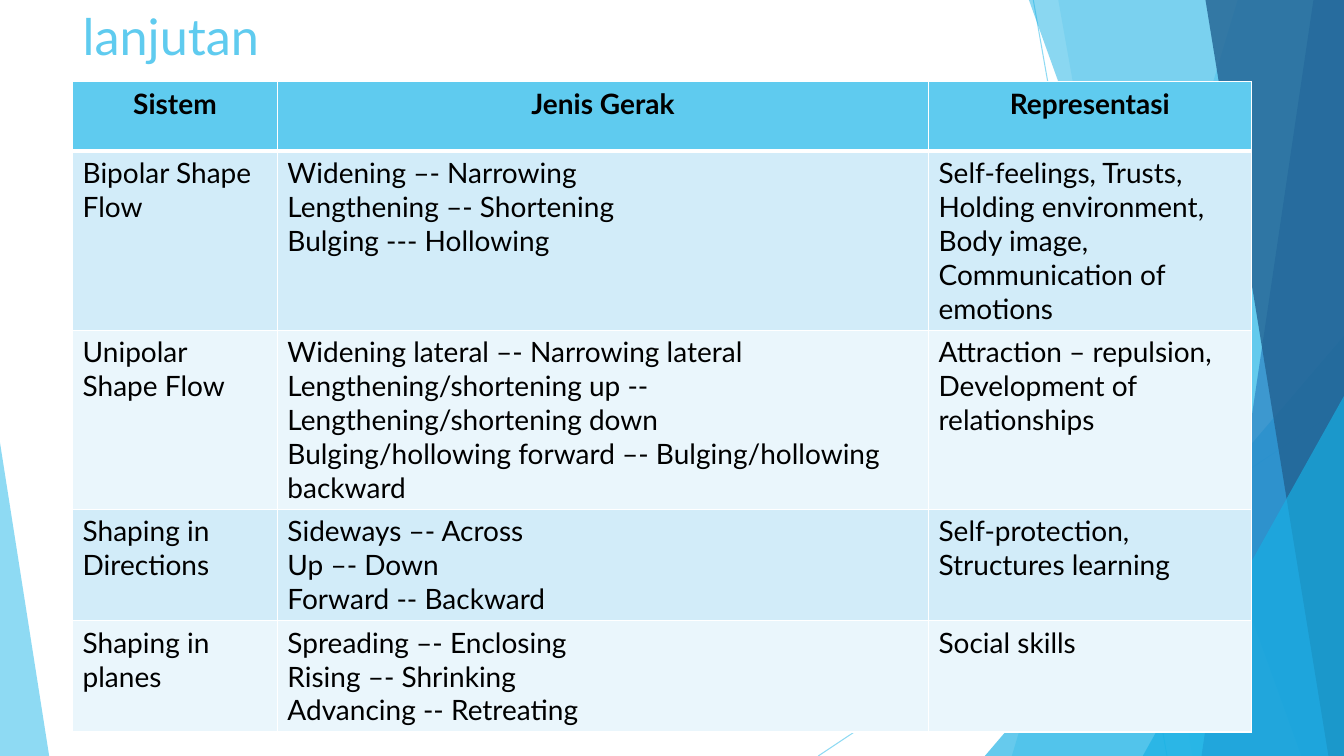
from lxml import etree
from pptx import Presentation
from pptx import util as u
from pptx.dml.color import RGBColor
from pptx.enum import shapes, text
from pptx.oxml.ns import qn

WIDTH, HEIGHT = 33.87, 19.05  # all lengths in cm
FONT = "Lato"
SKY, CYAN, BLUE, NAVY = "5FCBEF", "17B0E4", "2E83C3", "226292"
BANDS = ["D2ECF9", "EAF6FC"]
WHITE, BLACK = "FFFFFF", "000000"

TITLE = "lanjutan"
HEADER = ["Sistem", "Jenis Gerak", "Representasi"]
ROWS = [
    ("Bipolar Shape Flow",
     "Widening –- Narrowing\nLengthening –- Shortening\nBulging --- Hollowing",
     "Self-feelings, Trusts, Holding environment, Body image, Communication of emotions"),
    ("Unipolar Shape Flow",
     "Widening lateral –- Narrowing lateral\n"
     "Lengthening/shortening up -- Lengthening/shortening down\n"
     "Bulging/hollowing forward –- Bulging/hollowing backward",
     "Attraction – repulsion, Development of relationships"),
    ("Shaping in Directions",
     "Sideways –- Across\nUp –- Down\nForward -- Backward",
     "Self-protection, Structures learning"),
    ("Shaping in planes",
     "Spreading –- Enclosing\nRising –- Shrinking\nAdvancing -- Retreating",
     "Social skills"),
]
COLUMN_WIDTHS = [5.16, 16.41, 8.13]
ROW_HEIGHTS = [1.75, 4.5, 4.5, 2.8, 2.8]
TABLE_LEFT, TABLE_TOP = 1.83, 2.06

RAYS = [(26.04, 0, 29.41, HEIGHT), (WHITE and WIDTH, 10.24, 20.62, HEIGHT)]
# From back to front. Shard: top x, bottom x. Triangle: left, top, width, apex.
FACETS = [
    ("shard", (31.19, 25.5), SKY, 36),
    ("shard", (26.67, 30.05), SKY, 20),
    ("triangle", (24.82, 8.46, 9.05, 1), CYAN, 66),
    ("shard", (25.93, 32.79), CYAN, 50),
    ("shard", (33.1, 30.28), BLUE, 70),
    ("shard", (30.38, 33.48), NAVY, 80),
    ("triangle", (28.8, 9.98, 5.07, 1), CYAN, 66),
    ("triangle", (0, 11.15, 1.24, 0), SKY, 70),
]


def color(value):
    return RGBColor.from_string(value)


def set_opacity(owner, percent):
    """Make the solid colour inside a shape or line element translucent."""
    tone = next(owner.iter(qn("a:srgbClr")))
    etree.SubElement(tone, qn("a:alpha")).set("val", str(percent * 1000))


def add_ray(slide, x1, y1, x2, y2):
    ray = slide.shapes.add_connector(
        shapes.MSO_CONNECTOR.STRAIGHT, u.Cm(x1), u.Cm(y1), u.Cm(x2), u.Cm(y2))
    ray.line.color.rgb = color(SKY)
    ray.line.width = u.Pt(0.75)
    properties = ray._element.spPr
    set_opacity(properties, 70)
    etree.SubElement(properties, qn("a:effectLst"))


def add_shard(slide, top_x, bottom_x):
    """Draw a slanted panel that reaches the right edge of the slide."""
    builder = slide.shapes.build_freeform(u.Cm(top_x), 0)
    corners = [(WIDTH, 0), (WIDTH, HEIGHT), (bottom_x, HEIGHT)]
    builder.add_line_segments([(u.Cm(x), u.Cm(y)) for x, y in corners])
    return builder.convert_to_shape()


def add_triangle(slide, left, top, width, apex):
    """Draw a triangle that stands on the bottom edge of the slide."""
    triangle = slide.shapes.add_shape(
        shapes.MSO_SHAPE.ISOSCELES_TRIANGLE,
        u.Cm(left), u.Cm(top), u.Cm(width), u.Cm(HEIGHT - top))
    triangle.adjustments[0] = apex
    return triangle


def add_facet(slide, kind, geometry, fill, opacity):
    draw = add_shard if kind == "shard" else add_triangle
    facet = draw(slide, *geometry)
    facet.shadow.inherit = False
    facet.fill.solid()
    facet.fill.fore_color.rgb = color(fill)
    facet.line.fill.background()
    set_opacity(facet._element.spPr, opacity)


def set_borders(cell, top, bottom):
    """Give a cell white borders; top and bottom are widths in points."""
    properties = cell._tc.get_or_add_tcPr()
    sides = [("L", 1), ("R", 1), ("T", top), ("B", bottom)]
    for index, (side, width) in enumerate(sides):
        border = etree.Element(qn(f"a:ln{side}"), w=str(u.Pt(width)))
        fill = etree.SubElement(border, qn("a:solidFill"))
        etree.SubElement(fill, qn("a:srgbClr"), val=WHITE)
        properties.insert(index, border)


def format_runs(frame, size, tone, bold=False):
    for para in frame.paragraphs:
        for span in para.runs:
            span.font.name = FONT
            span.font.size = u.Pt(size)
            span.font.color.rgb = color(tone)
            span.font.bold = bold


def add_title(slide):
    title = slide.shapes.title
    title.left, title.top = u.Cm(TABLE_LEFT), u.Cm(0)
    title.width, title.height = u.Cm(23.88), u.Cm(TABLE_TOP)
    frame = title.text_frame
    frame.text = TITLE
    frame.vertical_anchor = text.MSO_ANCHOR.TOP
    frame.paragraphs[0].alignment = text.PP_ALIGN.LEFT
    format_runs(frame, 36, SKY)


def add_movement_table(slide):
    table = slide.shapes.add_table(
        len(ROW_HEIGHTS), len(COLUMN_WIDTHS), u.Cm(TABLE_LEFT), u.Cm(TABLE_TOP),
        u.Cm(sum(COLUMN_WIDTHS)), u.Cm(sum(ROW_HEIGHTS))).table
    for column, width in zip(table.columns, COLUMN_WIDTHS):
        column.width = u.Cm(width)
    for row, height in zip(table.rows, ROW_HEIGHTS):
        row.height = u.Cm(height)
    for r, texts in enumerate([HEADER, *ROWS]):
        is_header = r == 0
        for c, words in enumerate(texts):
            cell = table.cell(r, c)
            cell.text_frame.text = words
            cell.fill.solid()
            cell.fill.fore_color.rgb = color(SKY if is_header else BANDS[(r - 1) % 2])
            set_borders(cell, top=3 if r == 1 else 1, bottom=3 if is_header else 1)
            format_runs(cell.text_frame, 20, BLACK, bold=is_header)
            if is_header:
                cell.text_frame.paragraphs[0].alignment = text.PP_ALIGN.CENTER


def main():
    deck = Presentation()
    deck.slide_width, deck.slide_height = u.Cm(WIDTH), u.Cm(HEIGHT)
    slide = deck.slides.add_slide(deck.slide_layouts[5])
    for ray in RAYS:
        add_ray(slide, *ray)
    for facet in FACETS:
        add_facet(slide, *facet)
    add_title(slide)
    add_movement_table(slide)
    deck.save("out.pptx")


if __name__ == "__main__":
    main()
